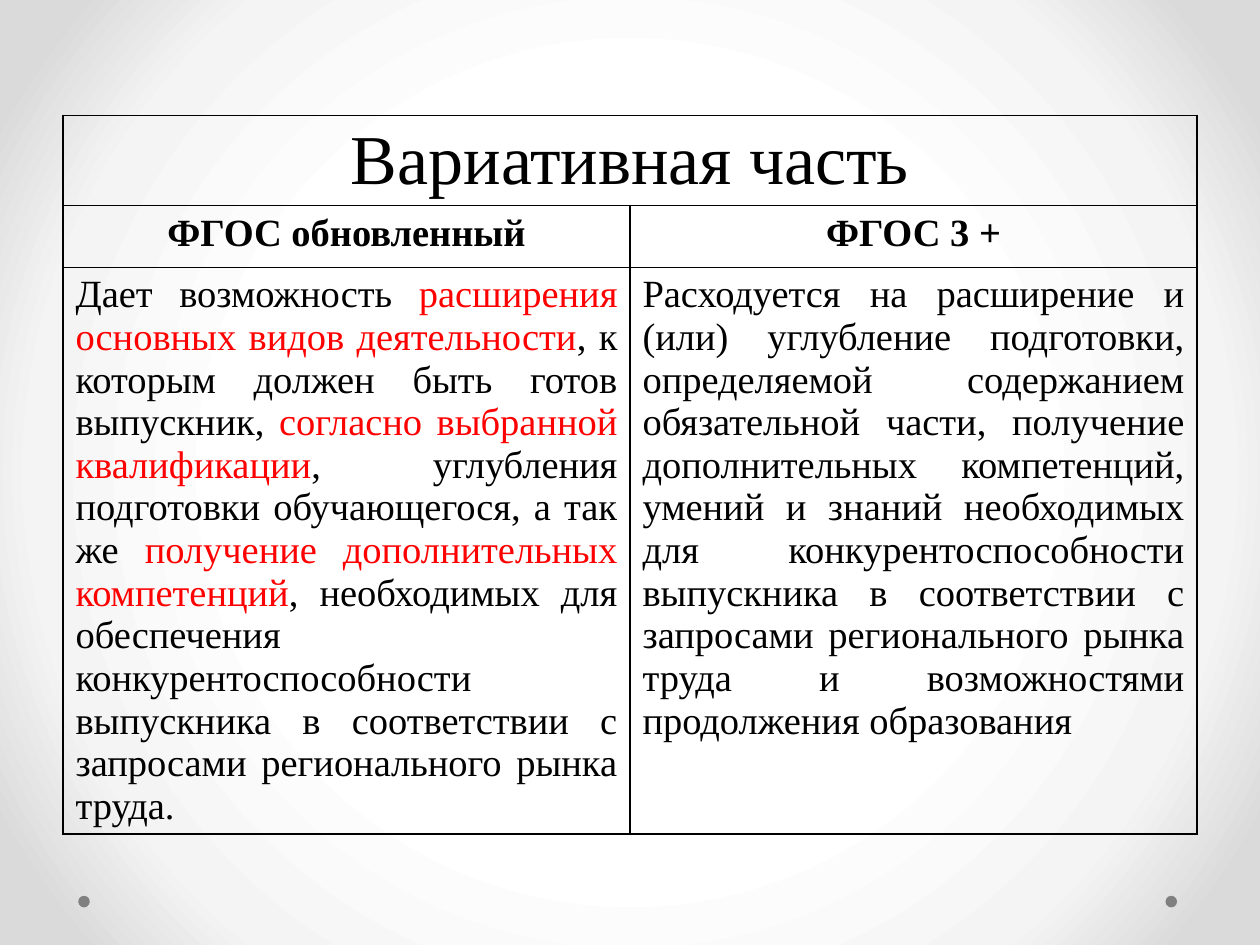
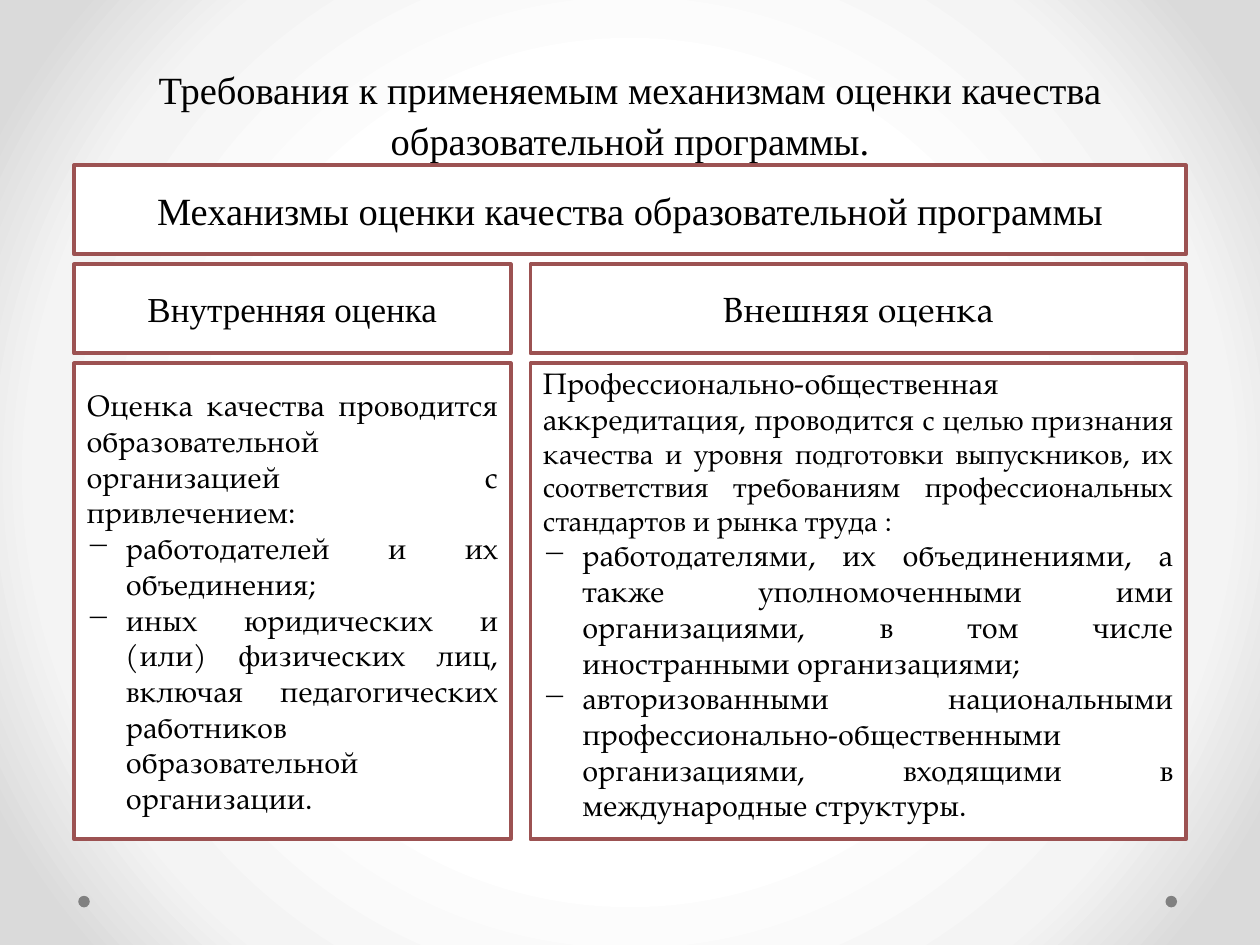
"""Build two slides on the variable part and on quality assessment."""
from pptx import Presentation
from pptx.dml.color import RGBColor as Rgb
from pptx.enum.shapes import MSO_SHAPE as Form
from pptx.enum.text import MSO_ANCHOR as Anchor, PP_ALIGN as Align
from pptx.oxml import parse_xml as parse
from pptx.oxml.ns import nsdecls
from pptx.util import Pt

HUES = {"ink": "000000", "red": "FF0000", "paper": "FFFFFF", "edge": "9C5252",
        "dot": "808080", "mist": "F4F4F4", "rim": "DADADA"}
TIMES = "Times New Roman"
PAGELLA = "TeX Gyre Pagella"
HUE = {name: Rgb.from_string(code) for name, code in HUES.items()}


def write(frame, paras, align, name, size, bold=False):
    """Fill a frame; a paragraph is a list of (text, changes), a leading None marks a bullet."""
    frame.word_wrap = True
    for num, runs in enumerate(paras):
        para = frame.paragraphs[0] if num == 0 else frame.add_paragraph()
        para.alignment = align
        if runs[0] is None:
            props = para._p.get_or_add_pPr()
            props.set("marL", str(Pt(22.5)))
            props.set("indent", str(Pt(-22.5)))
            props.append(parse(f'<a:buChar {nsdecls("a")} char="−"/>'))
            runs = runs[1:]
        for text, change in runs:
            look = {"name": name, "size": size, "bold": bold, "hue": "ink"} | change
            run = para.add_run()
            run.text = text
            run.font.color.rgb = HUE[look.pop("hue")]
            look["size"] = Pt(look["size"])
            for key, val in look.items():
                setattr(run.font, key, val)


def draw(page, form, box, fill, edge=None):
    """Add a flat shape with an optional outline."""
    shape = page.shapes.add_shape(form, *map(Pt, box))
    shape.shadow.inherit = False
    shape.fill.solid()
    shape.fill.fore_color.rgb = HUE[fill]
    if edge:
        shape.line.color.rgb = HUE[edge]
        shape.line.width = Pt(2.25)
    else:
        shape.line.fill.background()
    return shape


deck = Presentation()
deck.slide_width, deck.slide_height = Pt(720), Pt(540)
main = deck.slide_master
first = deck.slides.add_slide(deck.slide_layouts[6])
second = deck.slides.add_slide(deck.slide_layouts[5])

main.background.fill.solid()
solid = main.element.xpath("p:cSld/p:bg/p:bgPr/a:solidFill")[0]
stops = "".join(f'<a:gs pos="{pos}000"><a:srgbClr val="{HUES[hue]}"/></a:gs>'
                for pos, hue in ((50, "paper"), (76, "mist"), (92, "rim")))
solid.getparent().replace(solid, parse(
    f'<a:gradFill {nsdecls("a")} rotWithShape="1"><a:gsLst>{stops}</a:gsLst>'
    '<a:path path="circle"><a:fillToRect l="50000" t="50000" r="50000" b="50000"/>'
    '</a:path></a:gradFill>'))
for num, left in enumerate((666, 44.7)):
    dot = draw(first, Form.OVAL, (left, 511.9, 6.6, 6.6), "dot").element
    dot.xpath("p:nvSpPr/p:cNvPr")[0].set("id", str(101 + num))
    main.shapes.element.append(dot)

RED = {"hue": "red"}
rows = (
    (51.5, Align.CENTER, 40, False, ([("Вариативная часть", {})],)),
    (35.3, Align.CENTER, 22, True, ([("ФГОС обновленный", {})], [("ФГОС 3 +", {})])),
    (323.7, Align.JUSTIFY, 22, False, (
        [("Дает возможность ", {}),
         ("расширения основных видов деятельности", RED),
         (", к которым должен быть готов выпускник, ", {}),
         ("согласно выбранной квалификации", RED),
         (", углубления подготовки обучающегося, а так же ", {}),
         ("получение дополнительных компетенций", RED),
         (", необходимых для обеспечения конкурентоспособности выпускника "
          "в соответствии с запросами регионального рынка труда.", {})],
        [("Расходуется на расширение и (или) углубление подготовки, определяемой "
          "содержанием обязательной части, получение дополнительных компетенций, "
          "умений и знаний необходимых для конкурентоспособности выпускника "
          "в соответствии с запросами регионального рынка труда и возможностями "
          "продолжения образования", {})])),
)
tall = sum(row[0] for row in rows)
table = first.shapes.add_table(3, 2, Pt(36), Pt(66), Pt(648), Pt(tall)).table
table.first_row = table.horz_banding = False
table.cell(0, 0).merge(table.cell(0, 1))
for cell in table.iter_cells():
    for side in "LRTB":
        cell._tc.get_or_add_tcPr().append(parse(
            f'<a:ln{side} {nsdecls("a")} w="{Pt(1)}"><a:solidFill>'
            f'<a:srgbClr val="{HUES["ink"]}"/></a:solidFill></a:ln{side}>'))
    cell.fill.background()
for num, (high, align, size, bold, texts) in enumerate(rows):
    table.rows[num].height = Pt(high)
    for col, runs in enumerate(texts):
        write(table.cell(num, col).text_frame, [runs], align, TIMES, size, bold)

title = second.shapes.title
spot = {"left": 36, "top": 31.7, "width": 648, "height": 61}
for key, val in spot.items():
    setattr(title, key, Pt(val))
title.text_frame.vertical_anchor = Anchor.TOP
write(title.text_frame, [[("Требования к применяемым механизмам оценки качества "
                           "образовательной программы.", {})]], Align.CENTER, TIMES, 22)
title.text_frame.paragraphs[0].line_spacing = 1.1

inner = [
    [("Оценка качества проводится образовательной организацией с привлечением:", {})],
    [None, ("работодателей и их объединения;", {})],
    [None, ("иных юридических и (или) физических лиц, включая педагогических "
            "работников образовательной организации.", {})],
]
outer = [
    [("Профессионально-общественная аккредитация, проводится ", {}),
     ("с целью признания качества и уровня подготовки выпускников, их соответствия "
      "требованиям профессиональных стандартов и рынка труда :", {"size": 16})],
    [None, ("работодателями, их объединениями, а также уполномоченными ими "
            "организациями, в том числе иностранными организациями;", {})],
    [None, ("авторизованными национальными профессионально-общественными "
            "организациями, входящими в международные структуры.", {})],
]
head = [[("Механизмы оценки качества образовательной программы", {})]]
wide, near, far = (42.4, 635.2), (42.4, 249.4), (303.2, 374.4)
bars = ((94.4, 51), (151, 51), (207.6, 272))
boxes = (
    (wide, bars[0], head, Align.CENTER, TIMES, 22),
    (near, bars[1], [[("Внутренняя оценка", {})]], Align.CENTER, TIMES, 20),
    (far, bars[1], [[("Внешняя оценка", {})]], Align.CENTER, PAGELLA, 20),
    (near, bars[2], inner, Align.JUSTIFY, PAGELLA, 17),
    (far, bars[2], outer, Align.JUSTIFY, PAGELLA, 17),
)
for (left, width), (top, high), paras, align, name, size in boxes:
    box = draw(second, Form.RECTANGLE, (left, top, width, high), "paper", "edge")
    box.text_frame.vertical_anchor = Anchor.MIDDLE
    write(box.text_frame, paras, align, name, size)
box.text_frame.vertical_anchor = Anchor.TOP
box.text_frame.margin_top = Pt(1)

deck.save("out.pptx")
